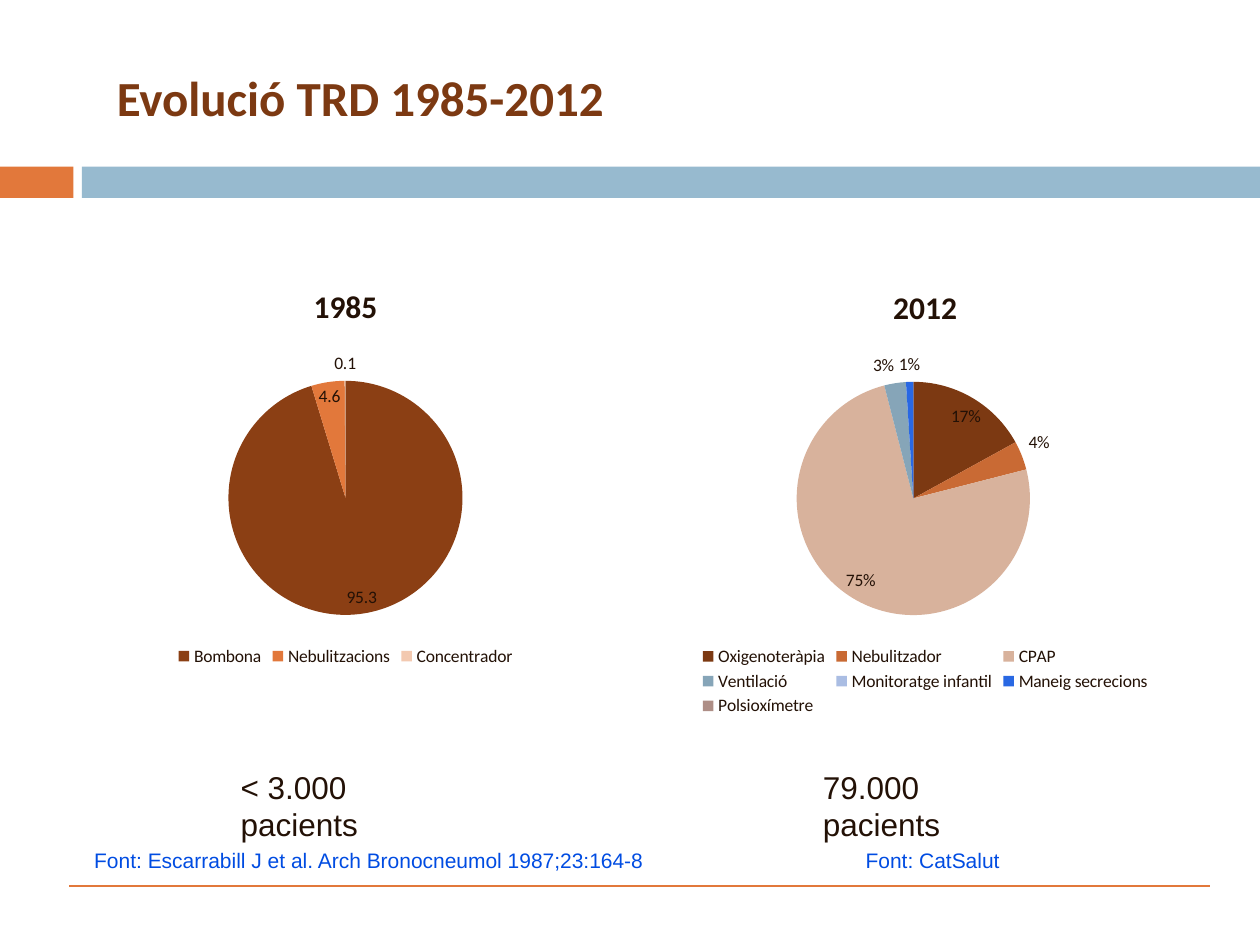
from lxml import etree
from pptx import Presentation
from pptx.chart.data import CategoryChartData
from pptx.dml.color import RGBColor
from pptx.enum.chart import XL_CHART_TYPE as ChartType
from pptx.enum.chart import XL_LABEL_POSITION as LabelPos
from pptx.enum.chart import XL_LEGEND_POSITION as LegendPos
from pptx.enum.shapes import MSO_CONNECTOR as Connector
from pptx.enum.shapes import MSO_SHAPE as Shape
from pptx.enum.text import MSO_ANCHOR as Anchor
from pptx.enum.text import PP_ALIGN as Align
from pptx.oxml.ns import qn
from pptx.util import Cm, Pt

COLORS = {
    "title": "7C3912",
    "text": "231106",
    "source": "004CE2",
    "orange": "E2783B",
    "blue": "97BACF",
}
PIE_1985 = {
    "Bombona": (95.3, "8B3F14"),
    "Nebulitzacions": (4.6, "E2783B"),
    "Concentrador": (0.1, "F3C9B0"),
}
PIE_2012 = {
    "Oxigenoteràpia": (17, "7C3912"),
    "Nebulitzador": (4, "C96A34"),
    "CPAP": (75, "D8B29C"),
    "Ventilació": (3, "86A5B8"),
    "Monitoratge infantil": (0, "AABDE3"),
    "Maneig secrecions": (1, "2968E3"),
    "Polsioxímetre": (0, "AE8E86"),
}


def rgb(value):
    return RGBColor.from_string(value)


def style_font(font, size, color, name="Calibri", bold=False):
    font.size, font.name, font.bold = Pt(size), name, bold
    font.color.rgb = rgb(color)


def add_title(slide, box, text):
    title = slide.shapes.title
    title.left, title.top, title.width, title.height = map(Cm, box)
    frame = title.text_frame
    frame.text = text
    frame.word_wrap = False
    frame.vertical_anchor = Anchor.MIDDLE
    paragraph = frame.paragraphs[0]
    paragraph.alignment = Align.LEFT
    style_font(paragraph.runs[0].font, 28, COLORS["title"], bold=True)


def add_band(slide, box):
    """Short orange block and long blue bar, with a narrow gap."""
    left, top, width, height = box
    block, bar_start = 1.48, 1.65
    for x, w, color in ((left, block, "orange"),
                        (left + bar_start, width - bar_start, "blue")):
        bar = slide.shapes.add_shape(Shape.RECTANGLE, Cm(x), Cm(top), Cm(w), Cm(height))
        bar.shadow.inherit = False
        bar.fill.solid()
        bar.fill.fore_color.rgb = rgb(COLORS[color])
        bar.line.fill.background()


def add_footer_rule(slide, left, right, y):
    rule = slide.shapes.add_connector(Connector.STRAIGHT, Cm(left), Cm(y), Cm(right), Cm(y))
    rule.line.color.rgb = rgb(COLORS["orange"])
    rule.line.width = Pt(0.75)
    etree.SubElement(rule._element.spPr, qn("a:effectLst"))


def add_pie(slide, box, year, slices, percent):
    data = CategoryChartData()
    data.categories = list(slices)
    data.add_series(year, [value for value, _ in slices.values()])
    chart = slide.shapes.add_chart(ChartType.PIE, *map(Cm, box), data).chart
    style_font(chart.font, 10, COLORS["text"])

    chart.has_title = True
    chart.chart_title.text_frame.text = year
    year_run = chart.chart_title.text_frame.paragraphs[0].runs[0]
    style_font(year_run.font, 18, COLORS["text"], bold=True)

    chart.has_legend = True
    chart.legend.position = LegendPos.BOTTOM
    chart.legend.include_in_layout = False

    plot = chart.plots[0]
    plot.vary_by_categories = True
    plot.has_data_labels = True
    labels = plot.data_labels
    labels.show_percentage, labels.show_value = percent, not percent
    labels.number_format = "0%" if percent else "General"
    labels.number_format_is_linked = False
    labels.position = LabelPos.BEST_FIT
    leader = labels._element.find(qn("c:showLeaderLines"))
    if leader is None:
        leader = etree.SubElement(labels._element, qn("c:showLeaderLines"))
    leader.set("val", "1")

    for index, (_, color) in enumerate(slices.values()):
        fill = plot.series[0].points[index].format.fill
        fill.solid()
        fill.fore_color.rgb = rgb(color)


def add_note(slide, box, text, size, color):
    frame = slide.shapes.add_textbox(*map(Cm, box)).text_frame
    frame.word_wrap = True
    frame.text = text
    style_font(frame.paragraphs[0].runs[0].font, size, color, "Arial")


def main():
    deck = Presentation()
    deck.slide_width, deck.slide_height = Cm(25.4), Cm(19.05)
    slide = deck.slides.add_slide(deck.slide_layouts[5])

    # Heading and decoration
    add_band(slide, (0, 3.36, 25.4, 0.63))
    add_footer_rule(slide, 1.4, 24.4, 17.86)
    add_title(slide, (2.1, 1.23, 10.46, 1.45), "Evolució TRD 1985-2012")

    # Therapies by year
    add_pie(slide, (1.4, 5.33, 11.13, 8.2), "1985", PIE_1985, percent=False)
    add_pie(slide, (12.3, 5.33, 12.7, 9.2), "2012", PIE_2012, percent=True)

    # Patient totals and sources
    for left, text in ((4.6, "< 3.000 pacients"), (16.34, "79.000 pacients")):
        add_note(slide, (left, 15.35, 4.7, 1.02), text, 18, COLORS["text"])
    for left, width, text in (
        (1.65, 11.9, "Font: Escarrabill J et al. Arch Bronocneumol 1987;23:164-8"),
        (17.2, 3.3, "Font: CatSalut"),
    ):
        add_note(slide, (left, 16.97, width, 0.76), text, 12, COLORS["source"])

    deck.save("out.pptx")


if __name__ == "__main__":
    main()
